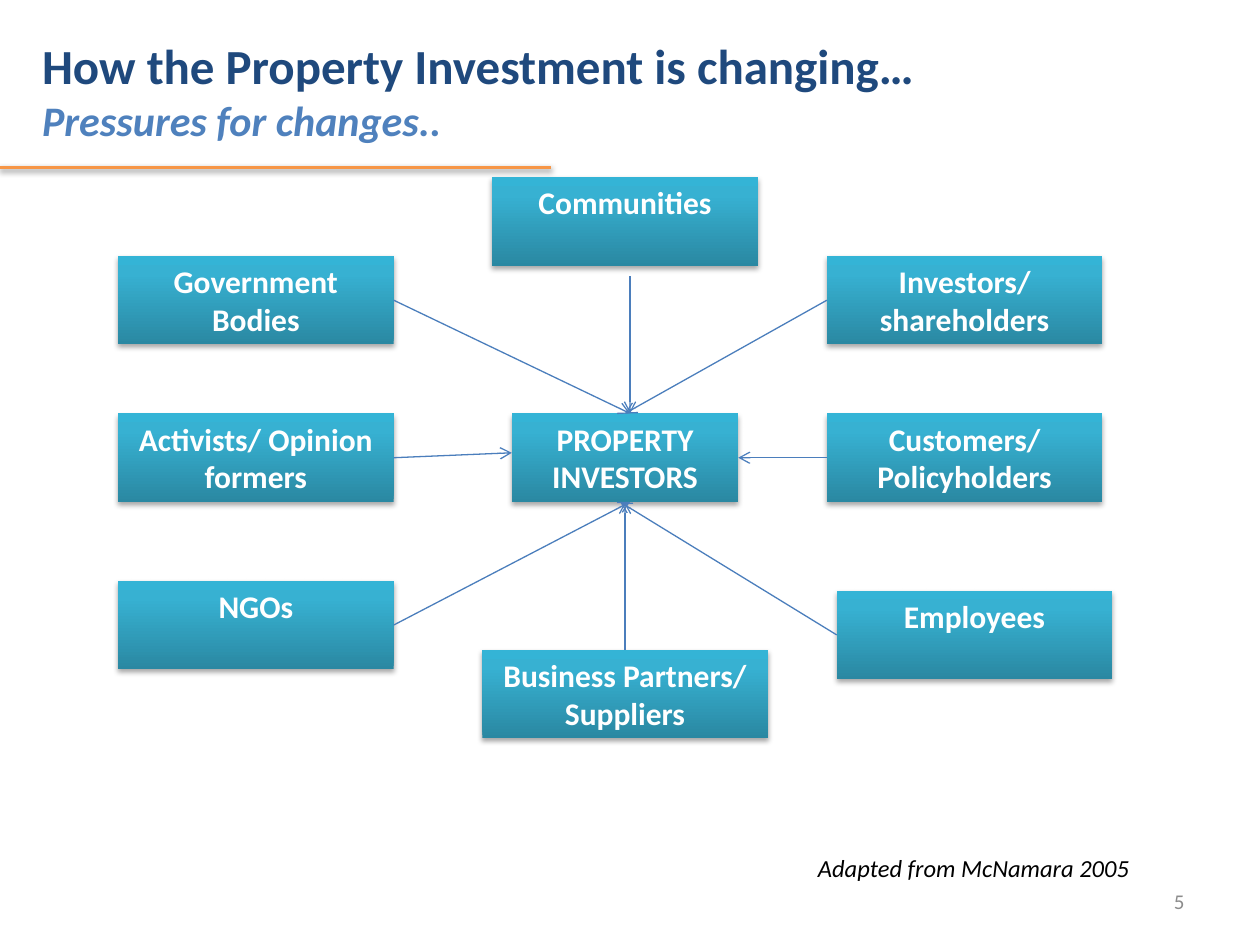
import dataclasses

import pptx
import pptx.util
import pptx.dml.color
import pptx.enum.shapes
import pptx.enum.text
import pptx.oxml
import pptx.oxml.ns

COLUMNS, ROWS = 64, 48
TOP, LEFT, BOTTOM, RIGHT = range(4)
ALIGN = pptx.enum.text.PP_ALIGN
ANCHOR = pptx.enum.text.MSO_ANCHOR
AUTO_SIZE = pptx.enum.text.MSO_AUTO_SIZE


@dataclasses.dataclass(frozen=True)
class Theme:
    font: str = "Calibri"
    heading: str = "1F497D"
    subheading: str = "4F81BD"
    rule: str = "F79646"
    arrow: str = "4B7EBC"
    shadow: str = "000000"
    box_text: str = "FFFFFF"
    source: str = "000000"
    page: str = "8C8C8C"
    box_stops: tuple = ((0, "2A88A2"), (80, "37B1D2"), (100, "34B4D6"))
    heading_size: int = 28
    subheading_size: int = 24
    box_size: int = 18
    source_size: int = 14
    page_size: int = 12


def drawing_xml(body):
    """Parse one DrawingML element, given without its namespace declaration."""
    tag, rest = body.split(" ", 1)
    return pptx.oxml.parse_xml(f"{tag} {pptx.oxml.ns.nsdecls('a')} {rest}")


class PressureSlide:
    """Style and current slide; places are (column, row) on a 64 by 48 grid."""

    def __init__(self, deck, theme):
        self.theme = theme
        self.column = deck.slide_width / COLUMNS
        self.row = deck.slide_height / ROWS
        self.slide = deck.slides.add_slide(deck.slide_layouts[5])
        self.shapes = self.slide.shapes

    def lengths(self, *cells):
        """Turn alternating columns and rows into slide lengths."""
        return [round(cell * (self.row if i % 2 else self.column))
                for i, cell in enumerate(cells)]

    def set_text(self, paragraph, text, size, color, align, bold=False, italic=False):
        paragraph.text = text
        paragraph.alignment = align
        font = paragraph.runs[0].font
        font.name, font.size = self.theme.font, pptx.util.Pt(size)
        font.bold, font.italic = bold, italic
        font.color.rgb = pptx.dml.color.RGBColor.from_string(color)

    def add_shadow(self, shape, opacity, distance):
        shape._element.spPr.append(drawing_xml(
            f'<a:effectLst ><a:outerShdw blurRad="{pptx.util.Pt(3.1)}" '
            f'dist="{pptx.util.Pt(distance)}" dir="5400000" rotWithShape="0">'
            f'<a:srgbClr val="{self.theme.shadow}"><a:alpha val="{opacity * 1000}"/>'
            '</a:srgbClr></a:outerShdw></a:effectLst>'))

    def title(self, place, heading, subheading):
        title = self.shapes.title
        title.left, title.top, title.width, title.height = self.lengths(*place)
        frame = title.text_frame
        frame.word_wrap, frame.vertical_anchor = True, ANCHOR.TOP
        frame.auto_size = AUTO_SIZE.SHAPE_TO_FIT_TEXT
        self.set_text(frame.paragraphs[0], heading, self.theme.heading_size,
                      self.theme.heading, ALIGN.LEFT, bold=True)
        self.set_text(frame.add_paragraph(), subheading, self.theme.subheading_size,
                      self.theme.subheading, ALIGN.LEFT, bold=True, italic=True)

    def line(self, start, end, color, width):
        line = self.shapes.add_connector(
            pptx.enum.shapes.MSO_CONNECTOR.STRAIGHT, *self.lengths(*start, *end))
        line.line.color.rgb = pptx.dml.color.RGBColor.from_string(color)
        line.line.width = pptx.util.Pt(width)
        return line

    def rule(self, start, end):
        self.add_shadow(self.line(start, end, self.theme.rule, 2), 38, 1.6)

    def box(self, place, text):
        box = self.shapes.add_shape(
            pptx.enum.shapes.MSO_SHAPE.RECTANGLE, *self.lengths(*place))
        box.line.fill.background()
        stops = "".join(f'<a:gs pos="{share * 1000}"><a:srgbClr val="{color}"/></a:gs>'
                        for share, color in self.theme.box_stops)
        box._element.spPr.insert(2, drawing_xml(
            f'<a:gradFill rotWithShape="1"><a:gsLst>{stops}</a:gsLst>'
            '<a:lin ang="16200000" scaled="0"/></a:gradFill>'))
        self.add_shadow(box, 35, 1.8)
        frame = box.text_frame
        frame.word_wrap, frame.vertical_anchor = True, ANCHOR.TOP
        self.set_text(frame.paragraphs[0], text, self.theme.box_size,
                      self.theme.box_text, ALIGN.CENTER, bold=True)
        return box

    def arrow(self, tip, tail, tip_joint=None, tail_joint=None):
        """Draw an arrow; a joint is a (box, side) pair that holds that end."""
        arrow = self.line(tip, tail, self.theme.arrow, 0.75)
        arrow.get_or_add_ln().append(drawing_xml('<a:headEnd type="arrow"/>'))
        arrow._element.spPr.append(drawing_xml("<a:effectLst />"))
        if tip_joint:
            arrow.begin_connect(*tip_joint)
        if tail_joint:
            arrow.end_connect(*tail_joint)

    def note(self, place, text, size, color, anchor=ANCHOR.TOP, italic=False):
        note = self.shapes.add_textbox(*self.lengths(*place))
        note.text_frame.word_wrap = True
        note.text_frame.vertical_anchor = anchor
        self.set_text(note.text_frame.paragraphs[0], text, size, color,
                      ALIGN.RIGHT, italic=italic)


def main():
    deck = pptx.Presentation()
    deck.slide_width, deck.slide_height = pptx.util.Inches(10), pptx.util.Inches(7.5)
    theme = Theme()
    page = PressureSlide(deck, theme)

    page.rule((0, 8.5), (28, 8.5))
    page.title((1.5, 1.5, 60, 6.25), "How the Property Investment is changing…",
               "Pressures for changes..")

    height = 4.5
    left, right, width = 6, 42, 14
    investors = page.box((26, 21, 11.5, height), "PROPERTY INVESTORS")
    top_joint, bottom_joint, right_joint = (
        (investors, side) for side in (TOP, BOTTOM, RIGHT))

    # text, column, row, width, arrow tip, tip joint, side the arrow leaves from
    pressures = [
        ("Investors/ shareholders", right, 13, width, (31.75, 21), top_joint, LEFT),
        ("Customers/ Policyholders", right, 21, width, (37.5, 23.25), right_joint, LEFT),
        ("Employees", 42.5, 30, width, (31.5, 25.5), None, LEFT),
        ("Business Partners/ Suppliers", 24.5, 33, 14.5, (31.75, 25.5), bottom_joint, TOP),
        ("NGOs", left, 29.5, width, (32, 25.5), None, RIGHT),
        ("Activists/ Opinion formers", left, 21, width, (26, 23), None, RIGHT),
        ("Government Bodies", left, 13, width, (32, 21), None, RIGHT),
    ]
    for text, column, row, box_width, tip, tip_joint, side in pressures:
        pressure = page.box((column, row, box_width, height), text)
        page.arrow(tip, (column, row), tip_joint, (pressure, side))

    page.box((25, 9, 13.5, height), "Communities")
    page.arrow((32, 21), (32, 14))

    page.note((34, 43, 24, 2.2), "Adapted from McNamara 2005",
              theme.source_size, theme.source, italic=True)
    page.note((45.9, 44.5, 14.9, 2.55), "5", theme.page_size, theme.page, ANCHOR.MIDDLE)
    deck.save("out.pptx")


if __name__ == "__main__":
    main()
